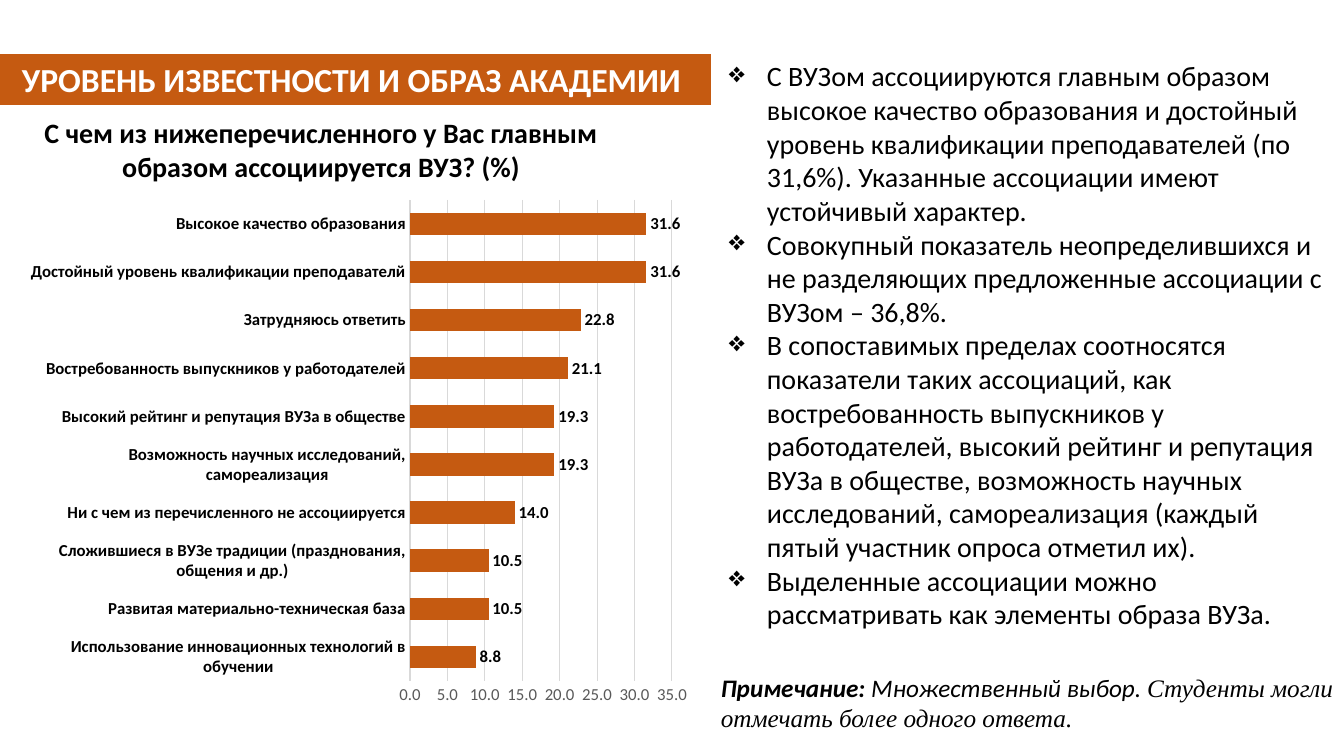
from lxml import etree
from pptx import Presentation
from pptx import util as u
from pptx.chart.data import CategoryChartData
from pptx.dml.color import RGBColor
from pptx.enum import chart as ch, shapes, text
from pptx.oxml import parse_xml
from pptx.oxml.ns import nsdecls, qn

FONT, SERIF = "Calibri", "Times New Roman"
ORANGE, BLACK, WHITE, GRAY, GRID = "C55A11", "000000", "FFFFFF", "595959", "D9D9D9"

HEADING = "УРОВЕНЬ ИЗВЕСТНОСТИ И ОБРАЗ АКАДЕМИИ"
QUESTION = "С чем из нижеперечисленного у Вас главным образом ассоциируется ВУЗ? (%)"
ASSOCIATIONS = [  # bottom bar first
    ("Использование инновационных технологий в обучении", 8.8),
    ("Развитая материально-техническая база", 10.5),
    ("Сложившиеся в ВУЗе традиции (празднования, общения и др.)", 10.5),
    ("Ни с чем из перечисленного не ассоциируется", 14.0),
    ("Возможность научных исследований, самореализация", 19.3),
    ("Высокий рейтинг и репутация ВУЗа в обществе", 19.3),
    ("Востребованность выпускников у работодателей", 21.1),
    ("Затрудняюсь ответить", 22.8),
    ("Достойный уровень квалификации преподавателй", 31.6),
    ("Высокое качество образования", 31.6),
]
FINDINGS = [
    "С ВУЗом ассоциируются главным образом высокое качество образования и достойный "
    "уровень квалификации преподавателей (по 31,6%). Указанные ассоциации имеют "
    "устойчивый характер.",
    "Совокупный показатель неопределившихся и не разделяющих предложенные ассоциации "
    "с ВУЗом – 36,8%.",
    "В сопоставимых пределах соотносятся показатели таких ассоциаций, как "
    "востребованность выпускников у работодателей, высокий рейтинг и репутация ВУЗа в "
    "обществе, возможность научных исследований, самореализация (каждый пятый участник "
    "опроса отметил их).",
    "Выделенные ассоциации можно рассматривать как элементы образа ВУЗа.",
]
NOTE = [  # text, font, bold
    ("Примечание: ", FONT, True),
    ("Множественный выбор. ", FONT, False),
    ("Студенты могли отмечать более одного ответа.", SERIF, False),
]

# Boxes in px: left, top, width, height
HEADING_BOX = (0, 54, 711, 51)
QUESTION_BOX = (0, 111, 642, 78)
CHART_BOX = (17, 190, 683, 526)
PLOT_BOX = (410, 200, 262, 481)
FINDINGS_BOX = (719, 54, 626, 587)
NOTE_BOX = (711, 667, 634, 72)


def px(n):
    return u.Emu(round(n * 914400 / 100.8))


def rgb(color):
    return RGBColor.from_string(color)


def style(font, size, color=BLACK, bold=False, name=FONT, italic=False):
    font.size, font.bold, font.italic, font.name = u.Pt(size), bold, italic, name
    font.color.rgb = rgb(color)


def add_text(slide, box):
    tf = slide.shapes.add_textbox(*map(px, box)).text_frame
    tf.word_wrap = True
    return tf


def add_bullet(p, indent, char):
    pPr = p._p.get_or_add_pPr()
    pPr.set("marL", str(indent))
    pPr.set("indent", str(-indent))
    etree.SubElement(pPr, qn("a:buChar")).set("char", char)


def place_plot(chart, plot, frame):
    """Fix the inner plot area as fractions of the chart frame."""
    parts = {
        "x": (plot[0] - frame[0]) / frame[2],
        "y": (plot[1] - frame[1]) / frame[3],
        "w": plot[2] / frame[2],
        "h": plot[3] / frame[3],
    }
    modes = '<c:layoutTarget val="inner"/><c:xMode val="edge"/><c:yMode val="edge"/>'
    values = "".join(f'<c:{k} val="{v:.4f}"/>' for k, v in parts.items())
    area = chart._chartSpace.find(".//" + qn("c:plotArea"))
    for old in area.findall(qn("c:layout")):
        area.remove(old)
    area.insert(0, parse_xml(
        f'<c:layout {nsdecls("c")}><c:manualLayout>{modes}{values}</c:manualLayout></c:layout>'))


prs = Presentation()
prs.slide_width, prs.slide_height = px(1344), px(756)
slide = prs.slides.add_slide(prs.slide_layouts[6])

# Heading band
sp = slide.shapes.add_shape(shapes.MSO_SHAPE.RECTANGLE, *map(px, HEADING_BOX))
sp.shadow.inherit = False
sp.fill.solid()
sp.fill.fore_color.rgb = rgb(ORANGE)
sp.line.fill.background()
tf = sp.text_frame
tf.word_wrap = True
tf.margin_left = px(22)
p = tf.paragraphs[0]
p.text = HEADING
p.alignment = text.PP_ALIGN.LEFT
style(p.runs[0].font, 24, WHITE, True)

# Findings
tf = add_text(slide, FINDINGS_BOX)
tf.text = "\n".join(FINDINGS)
for p in tf.paragraphs:
    add_bullet(p, px(38), "❖")
    style(p.runs[0].font, 20)

# Bar chart
data = CategoryChartData(number_format="0.0")
data.categories = [name for name, _ in ASSOCIATIONS]
data.add_series("Series 1", [value for _, value in ASSOCIATIONS])
chart = slide.shapes.add_chart(
    ch.XL_CHART_TYPE.BAR_CLUSTERED, *map(px, CHART_BOX), data).chart
chart.has_legend = chart.has_title = False
style(chart.font, 10)
place_plot(chart, PLOT_BOX, CHART_BOX)

plot = chart.plots[0]
plot.gap_width, plot.overlap, plot.vary_by_categories = 115, -20, False
bars = plot.series[0]
bars.format.fill.solid()
bars.format.fill.fore_color.rgb = rgb(ORANGE)
plot.has_data_labels = True
labels = plot.data_labels
labels.show_value = True
labels.number_format, labels.number_format_is_linked = "0.0", False
labels.position = ch.XL_LABEL_POSITION.OUTSIDE_END
style(labels.font, 12, bold=True)

cats, vals = chart.category_axis, chart.value_axis
for axis in (cats, vals):
    axis.major_tick_mark = axis.minor_tick_mark = ch.XL_TICK_MARK.NONE
style(cats.tick_labels.font, 12, bold=True)
cats.format.line.color.rgb = rgb(GRID)
cats.format.line.width = u.Pt(1)
style(vals.tick_labels.font, 12, GRAY)
vals.minimum_scale, vals.maximum_scale, vals.major_unit = 0, 35, 5
vals.tick_labels.number_format = "0.0"
vals.tick_labels.number_format_is_linked = False
vals.format.line.fill.background()
vals.has_major_gridlines = True
vals.major_gridlines.format.line.color.rgb = rgb(GRID)
vals.major_gridlines.format.line.width = u.Pt(0.75)

# Survey question
tf = add_text(slide, QUESTION_BOX)
tf.text = QUESTION
p = tf.paragraphs[0]
p.alignment = text.PP_ALIGN.CENTER
style(p.runs[0].font, 20, bold=True)

# Note
p = add_text(slide, NOTE_BOX).paragraphs[0]
for words, name, bold in NOTE:
    r = p.add_run()
    r.text = words
    style(r.font, 18, bold=bold, name=name, italic=True)

prs.save("out.pptx")
